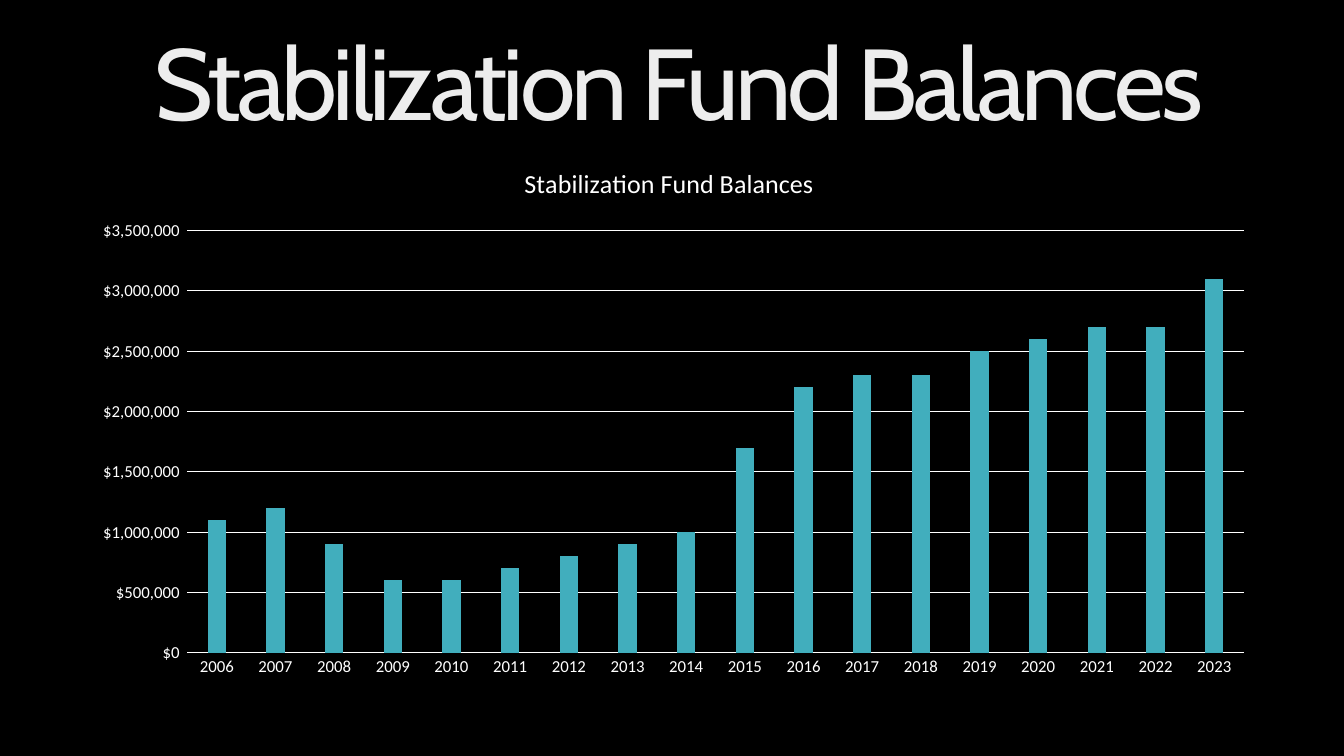
from dataclasses import dataclass

from lxml import etree
from pptx import Presentation
from pptx.chart import data as chart_data
from pptx.dml.color import RGBColor
from pptx.enum import chart as ch, text
from pptx.oxml import parse_xml
from pptx.oxml.ns import nsdecls, qn
from pptx.util import Inches, Pt

HEADING = "Stabilization Fund Balances"
FIRST_YEAR = 2006
BALANCES = [
    1100000, 1200000, 900000, 600000, 600000, 700000, 800000, 900000, 1000000,
    1700000, 2200000, 2300000, 2300000, 2500000, 2600000, 2700000, 2700000, 3100000,
]
DOLLARS = '"$"#,##0_);\\("$"#,##0\\)'
HEADING_BOX = (0.14, 0.15, 13.19, 1.45)
CHART_BOX = (0.8, 1.43, 11.77, 5.37)
# Fractions of the chart frame
PLOT_AREA = {"x": 0.09, "y": 0.16, "w": 0.89, "h": 0.78}
CHART_TITLE_SPOT = {"x": 0.37, "y": 0.03}


@dataclass(frozen=True)
class Theme:
    background: RGBColor = RGBColor(0, 0, 0)
    ink: RGBColor = RGBColor(255, 255, 255)
    bar: RGBColor = RGBColor(0x41, 0xAE, 0xBD)
    heading_stops: tuple = ((0, "BFBFBF"), (28, "EDEDED"), (100, "FFFFFF"))
    heading_angle: int = 80
    heading_font: str = "Cabin"
    chart_font: str = "Calibri"
    heading_size: float = 72
    chart_title_size: float = 18.6
    axis_size: float = 12
    line_width: float = 0.75


THEME = Theme()


def style_font(font, size):
    font.name = THEME.chart_font
    font.size = Pt(size)
    font.bold = False
    font.color.rgb = THEME.ink


def style_line(line):
    line.color.rgb = THEME.ink
    line.width = Pt(THEME.line_width)


def make_layout(fractions, inner=False):
    """Return a manual chart layout measured from the frame's top left."""
    layout = parse_xml(f"<c:layout {nsdecls('c')}><c:manualLayout/></c:layout>")
    settings = {"layoutTarget": "inner"} if inner else {}
    settings.update({f"{key}Mode": "edge" for key in "xy"})
    settings.update(fractions)
    for name, value in settings.items():
        etree.SubElement(layout[0], qn(f"c:{name}")).set("val", str(value))
    return layout


def place_chart_part(part, layout, before):
    """Swap in a layout ahead of the child with the given tag."""
    for old in part.findall(qn("c:layout")):
        part.remove(old)
    part.find(qn(before)).addprevious(layout)


def add_heading(page):
    box = page.shapes.title
    box.left, box.top, box.width, box.height = map(Inches, HEADING_BOX)
    frame = box.text_frame
    frame.text = HEADING
    frame.word_wrap = True
    frame.vertical_anchor = text.MSO_ANCHOR.MIDDLE
    para = frame.paragraphs[0]
    para.alignment = text.PP_ALIGN.CENTER
    para.line_spacing = 0.9
    span = para.runs[0]
    span.font.size = Pt(THEME.heading_size)
    span.font.name = THEME.heading_font
    stops = "".join(
        f'<a:gs pos="{place * 1000}"><a:srgbClr val="{color}"/></a:gs>'
        for place, color in THEME.heading_stops
    )
    properties = span.font._element
    properties.set("spc", "-300")
    properties.insert(0, parse_xml(
        f"<a:gradFill {nsdecls('a')}><a:gsLst>{stops}</a:gsLst>"
        f'<a:lin ang="{THEME.heading_angle * 60000}" scaled="0"/></a:gradFill>'
    ))


def add_balance_chart(page):
    table = chart_data.CategoryChartData(number_format=DOLLARS)
    table.categories = [str(FIRST_YEAR + step) for step in range(len(BALANCES))]
    table.add_series("Series 1", BALANCES)
    chart = page.shapes.add_chart(
        ch.XL_CHART_TYPE.COLUMN_CLUSTERED, *map(Inches, CHART_BOX), table
    ).chart
    style_font(chart.font, THEME.axis_size)
    chart.has_legend = False

    title = chart.chart_title
    title.text_frame.text = HEADING
    style_font(title.text_frame.paragraphs[0].runs[0].font, THEME.chart_title_size)
    title.include_in_layout = False
    place_chart_part(title._element, make_layout(CHART_TITLE_SPOT), "c:overlay")

    plot = chart.plots[0]
    plot.vary_by_categories = False
    plot.gap_width = 219
    plot.overlap = -27
    bars = plot.series[0].format.fill
    bars.solid()
    bars.fore_color.rgb = THEME.bar
    place_chart_part(
        chart._chartSpace.chart.plotArea, make_layout(PLOT_AREA, inner=True), "c:barChart"
    )

    years, dollars = chart.category_axis, chart.value_axis
    for axis in (years, dollars):
        axis.major_tick_mark = axis.minor_tick_mark = ch.XL_TICK_MARK.NONE
        style_font(axis.tick_labels.font, THEME.axis_size)
    style_line(years.format.line)
    dollars.format.line.fill.background()
    dollars.minimum_scale, dollars.maximum_scale = 0, 3500000
    dollars.major_unit = 500000
    dollars.has_major_gridlines = True
    style_line(dollars.major_gridlines.format.line)
    dollars.tick_labels.number_format = DOLLARS
    dollars.tick_labels.number_format_is_linked = False


def main():
    deck = Presentation()
    deck.slide_width, deck.slide_height = Inches(13.33), Inches(7.5)
    page = deck.slides.add_slide(deck.slide_layouts[5])
    page.background.fill.solid()
    page.background.fill.fore_color.rgb = THEME.background
    add_heading(page)
    add_balance_chart(page)
    deck.save("out.pptx")


if __name__ == "__main__":
    main()
